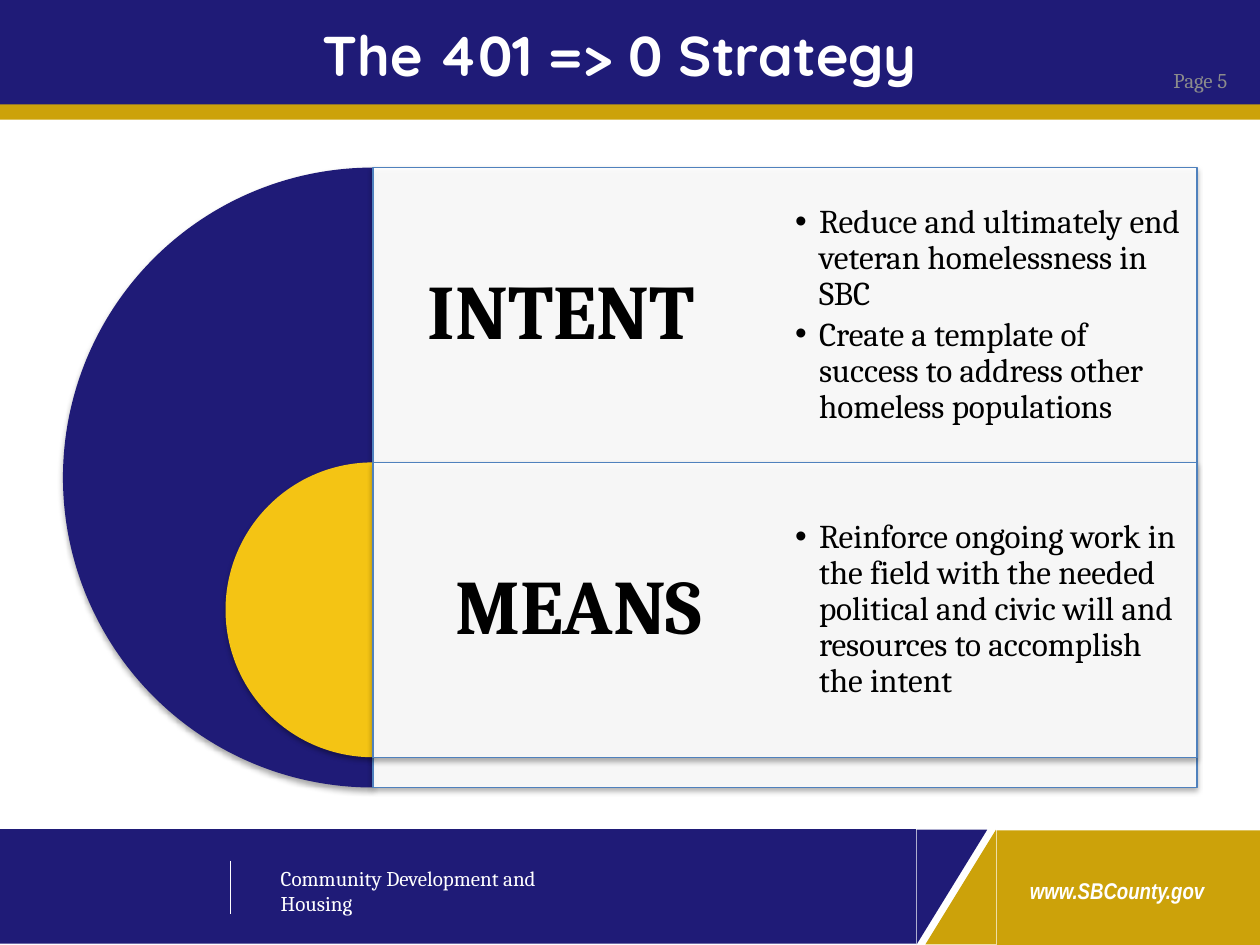
from dataclasses import dataclass

from pptx import Presentation
from pptx.dml.color import RGBColor
from pptx.enum.shapes import MSO_CONNECTOR, MSO_SHAPE
from pptx.enum.text import MSO_ANCHOR, MSO_AUTO_SIZE, PP_ALIGN
from pptx.oxml.ns import qn
from pptx.util import Inches, Pt
from lxml import etree

RECT, PIE, TRIANGLE = MSO_SHAPE.RECTANGLE, MSO_SHAPE.PIE, MSO_SHAPE.RIGHT_TRIANGLE
LEFT, CENTER, RIGHT = PP_ALIGN.LEFT, PP_ALIGN.CENTER, PP_ALIGN.RIGHT
TOP, MIDDLE = MSO_ANCHOR.TOP, MSO_ANCHOR.MIDDLE
TWO_CONTENT = 3


@dataclass(frozen=True)
class Theme:
    navy: str = "1F1B77"
    gold: str = "CCA20A"
    yellow: str = "F4C414"
    white: str = "FFFFFF"
    black: str = "000000"
    grey: str = "8C8C8C"
    outline: str = "4F81BD"
    title_font: str = "Quicksand"
    body_font: str = "Cambria"
    web_font: str = "Arial Narrow"
    title: int = 32
    heading: int = 44
    body: int = 19
    web: int = 13
    small: int = 12


def sub(parent, tag, **attrs):
    return etree.SubElement(parent, qn(tag), {k: str(v) for k, v in attrs.items()})


def inches(values):
    return [Inches(v) for v in values]


class SlideBuilder:
    def __init__(self, slide, theme):
        self.slide, self.theme = slide, theme

    def shape(self, kind, box, fill, rotation=0, line=None, shadow=False, opacity=100):
        sp = self.slide.shapes.add_shape(kind, *inches(box))
        sp.rotation = rotation
        sp.shadow.inherit = False
        sp.fill.solid()
        sp.fill.fore_color.rgb = RGBColor.from_string(fill)
        if opacity < 100:
            color = sp._element.spPr.find(qn("a:solidFill"))[0]
            sub(color, "a:alpha", val=opacity * 1000)
        if line:
            sp.line.color.rgb = RGBColor.from_string(line)
            sp.line.width = Pt(0.75)
        else:
            sp.line.fill.background()
        if shadow:
            self.drop_shadow(sp)
        return sp

    def drop_shadow(self, sp):
        effects = sp._element.spPr.find(qn("a:effectLst"))
        outer = sub(effects, "a:outerShdw", blurRad=Pt(3.1), dist=Pt(1.8),
                    dir=90 * 60000, rotWithShape=0)
        color = sub(outer, "a:srgbClr", val=self.theme.black)
        sub(color, "a:alpha", val=35000)

    def half_disc(self, box, fill):
        sp = self.shape(PIE, box, fill, shadow=True)
        sp.adjustments[0], sp.adjustments[1] = 54, 162  # 90 and 270 degrees

    def line(self, start, end, color, width):
        c = self.slide.shapes.add_connector(
            MSO_CONNECTOR.STRAIGHT, *inches(start + end))
        c.line.color.rgb = RGBColor.from_string(color)
        c.line.width = Pt(width)
        sub(c._element.spPr, "a:effectLst")

    def frame(self, sp, anchor, margins):
        tf = sp.text_frame
        tf.word_wrap = True
        tf.auto_size = MSO_AUTO_SIZE.NONE
        tf.vertical_anchor = anchor
        (tf.margin_left, tf.margin_top,
         tf.margin_right, tf.margin_bottom) = inches(margins)
        return tf

    def run(self, p, text, size, color, font=None, bold=False, italic=False):
        r = p.add_run()
        r.text = text
        r.font.name = font or self.theme.body_font
        r.font.size = Pt(size)
        r.font.bold, r.font.italic = bold, italic
        r.font.color.rgb = RGBColor.from_string(color)

    def text(self, box, text, size, color, align=LEFT, anchor=TOP,
             margins=(0.1, 0.05, 0.1, 0.05), spacing=1.0, **style):
        sp = self.slide.shapes.add_textbox(*inches(box))
        p = self.frame(sp, anchor, margins).paragraphs[0]
        p.alignment, p.line_spacing = align, spacing
        self.run(p, text, size, color, **style)

    def place(self, sp, box):
        """Move a placeholder to the box and in front of everything drawn so far."""
        sp.left, sp.top, sp.width, sp.height = inches(box)
        self.slide.shapes._spTree.append(sp._element)

    def title(self, box, text):
        sp = self.slide.shapes.title
        self.place(sp, box)
        p = self.frame(sp, TOP, (0.1, 0.08, 0.1, 0.05)).paragraphs[0]
        p.alignment = CENTER
        self.run(p, text, self.theme.title, self.theme.white,
                 font=self.theme.title_font, bold=True)

    def bullets(self, idx, box, items):
        sp = self.slide.placeholders[idx]
        self.place(sp, box)
        tf = self.frame(sp, MIDDLE, (0.08,) * 4)
        for i, item in enumerate(items):
            p = tf.paragraphs[0] if i == 0 else tf.add_paragraph()
            pPr = p._p.get_or_add_pPr()
            pPr.set("marL", str(Inches(0.19)))
            pPr.set("indent", str(Inches(-0.19)))
            sub(pPr, "a:buChar", char="•")
            p.alignment, p.line_spacing = LEFT, 0.9
            p.space_before, p.space_after = Pt(0), Pt(2.85)
            self.run(p, item, self.theme.body, self.theme.black)


def draw_header(s):
    t = s.theme
    s.shape(RECT, (0, 0.79, 10, 0.16), t.gold)
    s.shape(RECT, (0, 0, 10, 0.83), t.navy)
    s.text((8.67, 0.44, 1.17, 0.4), "Page 5", t.small, t.grey,
           align=RIGHT, anchor=MIDDLE)


def draw_footer(s):
    t = s.theme
    s.shape(RECT, (7.91, 6.59, 2.09, 0.91), t.gold)
    s.shape(TRIANGLE, (7.17, 6.76, 0.91, 0.56), t.gold, rotation=270)
    s.shape(RECT, (0, 6.58, 7.27, 0.91), t.navy)
    s.shape(TRIANGLE, (7.1, 6.76, 0.91, 0.56), t.navy, rotation=90)
    s.line((1.83, 6.83), (1.83, 7.25), t.white, 0.25)
    s.text((7.74, 6.91, 2.25, 0.32), "www.SBCounty.gov", t.web, t.white,
           align=CENTER, font=t.web_font, bold=True, italic=True)
    s.text((2.13, 6.82, 2.77, 0.5), "Community Development and Housing",
           t.small, t.white)


def draw_strategy(s):
    t = s.theme
    left, top, width, row = 2.96, 1.33, 6.54, 2.34
    column = width / 2
    # heading, disc diameter, disc colour, right text margin, bullets
    levels = [
        ("INTENT", 4.92, t.navy, 0.46,
         ["Reduce and ultimately end veteran homelessness in SBC",
          "Create a template of success to address other homeless populations"]),
        ("MEANS", row, t.yellow, 0.18,
         ["Reinforce ongoing work in the field with the needed political and "
          "civic will and resources to accomplish the intent"]),
    ]
    for i, (heading, disc, color, margin, items) in enumerate(levels):
        y = top + i * row
        s.half_disc((left - disc / 2, y, disc, disc), color)
        s.shape(RECT, (left, y, width, disc), t.white, line=t.outline,
                shadow=True, opacity=90)
        s.text((left, y, column, row), heading, t.heading, t.black, align=CENTER,
               anchor=MIDDLE, margins=(0.18, 0.18, margin, 0.18), spacing=0.9,
               bold=True)
        s.bullets(i + 1, (left + column, y, column, row), items)


def main():
    prs = Presentation()
    prs.slide_width, prs.slide_height = Inches(10), Inches(7.5)
    slide = prs.slides.add_slide(prs.slide_layouts[TWO_CONTENT])
    s = SlideBuilder(slide, Theme())
    draw_header(s)
    draw_footer(s)
    draw_strategy(s)
    s.title((0.42, 0.08, 9, 1.25), "The 401 => 0 Strategy")
    prs.save("out.pptx")


if __name__ == "__main__":
    main()
